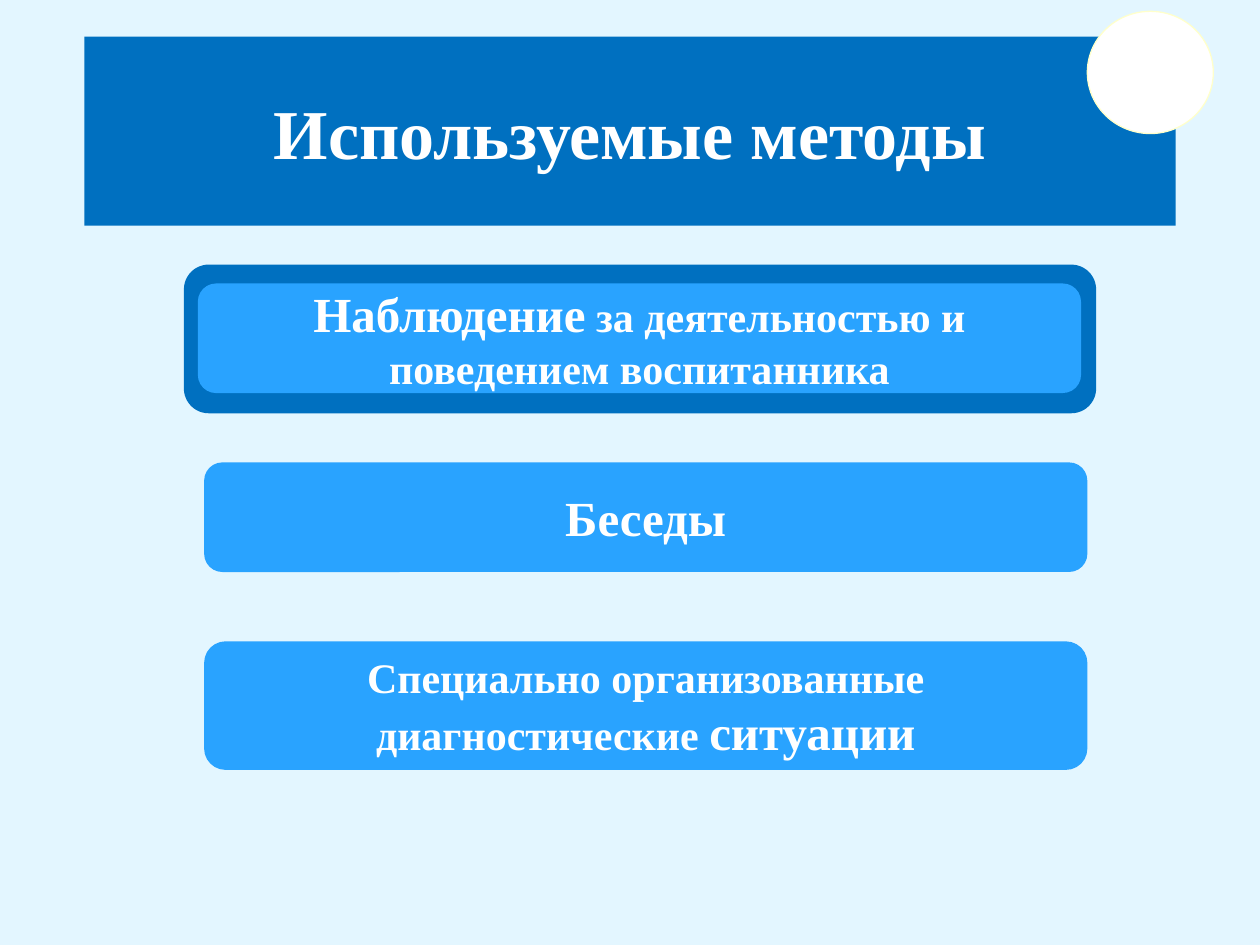
from pptx import Presentation
from pptx.dml.color import RGBColor
from pptx.enum.shapes import MSO_SHAPE
from pptx.enum.text import MSO_ANCHOR, MSO_AUTO_SIZE, PP_ALIGN
from pptx.oxml.xmlchemy import OxmlElement
from pptx.util import Inches, Pt

ROUNDED = MSO_SHAPE.ROUNDED_RECTANGLE
OVAL = MSO_SHAPE.OVAL
MIDDLE = MSO_ANCHOR.MIDDLE
NO_FIT = MSO_AUTO_SIZE.NONE
CENTER = PP_ALIGN.CENTER
TITLE_ONLY = 5

DARK_BLUE, LIGHT_BLUE, PALE_BLUE = "0070C0", "29A3FF", "E3F6FF"
WHITE, CREAM = "FFFFFF", "FFFFCC"

# Each method: box (left, top, width, height) and runs of (text, size)
METHODS = [
    ((1.57, 2.25, 7.01, 0.87),
     [("Наблюдение", 28), (" за деятельностью и поведением воспитанника", 24)]),
    ((1.62, 3.67, 7.01, 0.87), [("Беседы", 28)]),
    ((1.62, 5.09, 7.01, 1.02),
     [("Специально организованные диагностические ", 24), ("ситуации", 28)]),
]


def color(hex_value):
    return RGBColor.from_string(hex_value)


def paint(fill, hex_value):
    fill.solid()
    fill.fore_color.rgb = color(hex_value)


def add_block(slide, kind, box, fill, line=None):
    shape = slide.shapes.add_shape(kind, *map(Inches, box))
    shape.shadow.inherit = False
    paint(shape.fill, fill)
    if line:
        shape.line.color.rgb = color(line)
        shape.line.width = Pt(0.75)
    else:
        shape.line.fill.background()
    return shape


def write(shape, runs):
    frame = shape.text_frame
    frame_format = {"word_wrap": True, "auto_size": NO_FIT, "vertical_anchor": MIDDLE}
    for name, value in frame_format.items():
        setattr(frame, name, value)
    para = frame.paragraphs[0]
    para.alignment = CENTER
    for text, size in runs:
        span = para.add_run()
        span.text = text
        font_format = {"name": "Times New Roman", "size": Pt(size), "bold": True}
        for name, value in font_format.items():
            setattr(span.font, name, value)
        span.font.color.rgb = color(WHITE)


def add_title(slide, box):
    title = slide.shapes.title
    title.left, title.top, title.width, title.height = map(Inches, box)
    # Rounded outline for the placeholder
    outline = OxmlElement("a:prstGeom")
    outline.set("prst", "roundRect")
    outline.append(OxmlElement("a:avLst"))
    title.element.spPr.append(outline)
    paint(title.fill, DARK_BLUE)
    write(title, [("Используемые методы", 40)])


def add_methods(slide, frame_box):
    # Dark frame around the first method
    add_block(slide, ROUNDED, frame_box, DARK_BLUE)
    for box, runs in METHODS:
        write(add_block(slide, ROUNDED, box, LIGHT_BLUE), runs)


def main():
    deck = Presentation()
    deck.slide_width, deck.slide_height = Inches(10), Inches(7.5)
    slide = deck.slides.add_slide(deck.slide_layouts[TITLE_ONLY])
    paint(slide.background.fill, PALE_BLUE)
    add_title(slide, (0.67, 0.29, 8.66, 1.5))
    # Corner circle
    add_block(slide, OVAL, (8.63, 0.09, 1, 0.97), WHITE, CREAM)
    add_methods(slide, (1.46, 2.1, 7.24, 1.18))
    deck.save("out.pptx")


if __name__ == "__main__":
    main()
